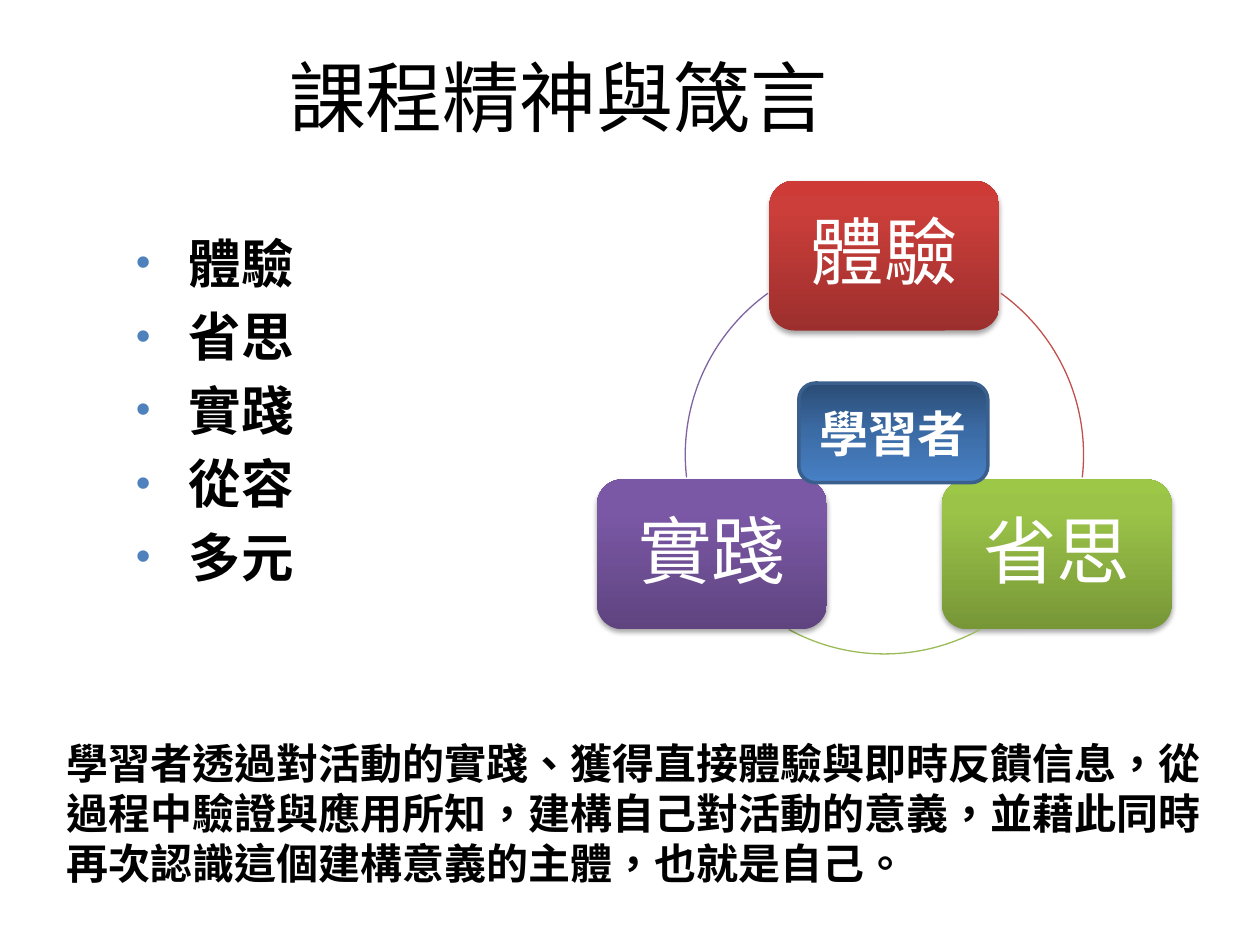
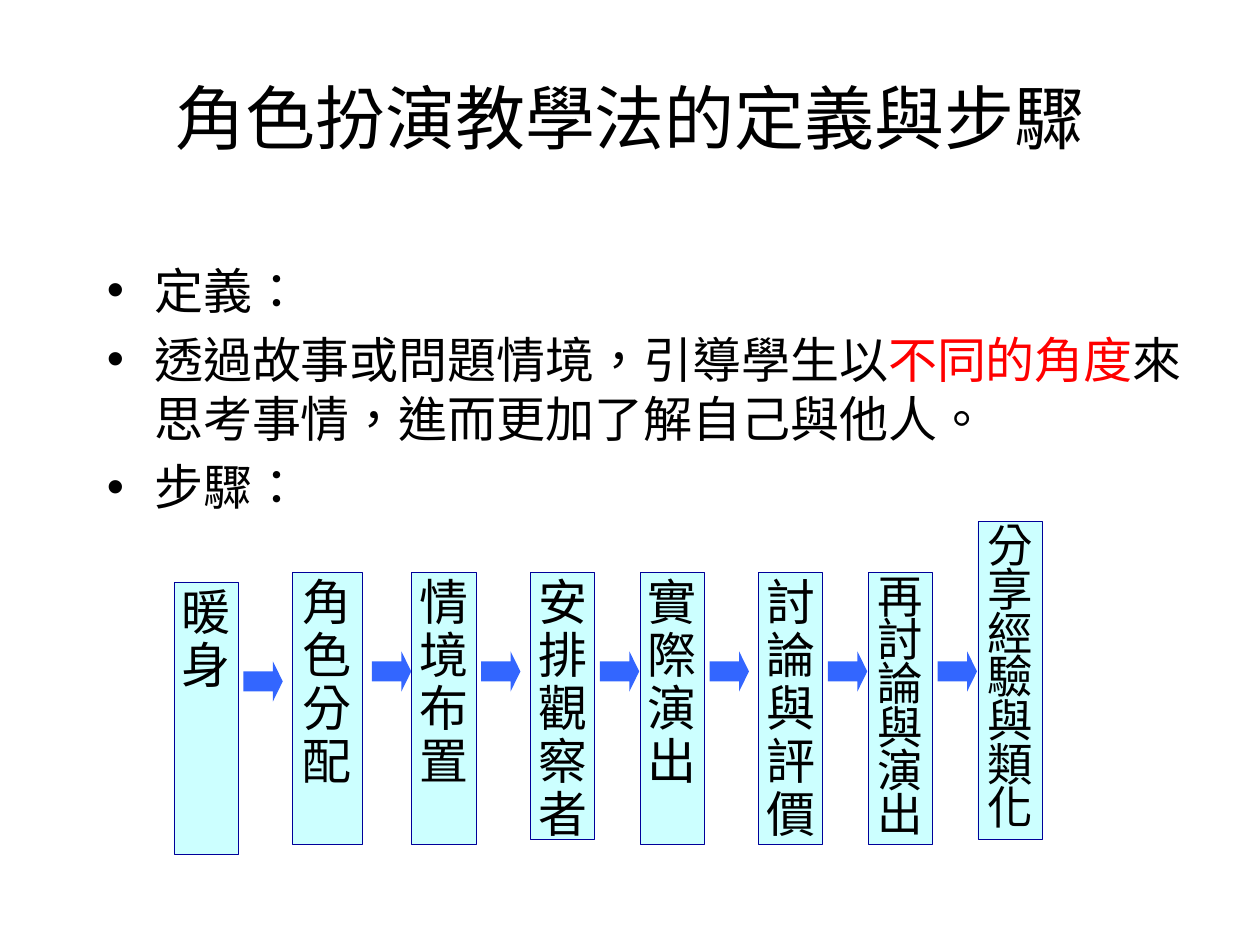
"""Build two teaching slides: the course spirit and the role-play steps."""
import math
from dataclasses import dataclass
from typing import Optional

import lxml.etree
import pptx
import pptx.dml.color
import pptx.enum.dml
import pptx.enum.lang
import pptx.enum.shapes
import pptx.enum.text
import pptx.oxml.ns
import pptx.util

Pt = pptx.util.Pt
qn = pptx.oxml.ns.qn
SHAPES = pptx.enum.shapes.MSO_SHAPE
ALIGN = pptx.enum.text.PP_ALIGN
ANCHOR = pptx.enum.text.MSO_ANCHOR

LATIN, CJK, STEP_FONT = "Calibri", "Noto Sans CJK SC", "Arial"
COLORS = {
    "ink": "000000", "white": "FFFFFF", "emphasis": "FF0000",
    "bullet": "4F81BD", "learner_edge": "3A5F8C",
    "experience": "C0504D", "reflection": "9BBB59", "practice": "8064A2",
    "step": "CCFFFF", "step_edge": "000099", "arrow": "3366FF",
}
GRADIENTS = {
    "experience": ((0, "9C2F2D"), (80, "CB3E3A"), (100, "CE3B37")),
    "reflection": ((0, "779737"), (80, "9BC348"), (100, "9DC746")),
    "practice": ((0, "5F4480"), (80, "7B58A6"), (100, "7C57A8")),
    "learner": ((0, "2A4C75"), (50, "3C6CA6"), (100, "4780C5")),
}


@dataclass(frozen=True)
class Box:
    left: float
    top: float
    width: float
    height: float

    def lengths(self) -> tuple:
        return Pt(self.left), Pt(self.top), Pt(self.width), Pt(self.height)


@dataclass(frozen=True)
class Style:
    size: float
    font: str = LATIN
    color: str = "ink"
    bold: bool = False


@dataclass(frozen=True)
class Bullet:
    indent: float
    color: Optional[str] = None
    percent: int = 100


@dataclass(frozen=True)
class CycleNode:
    label: str
    theme: str
    angle: float
    arc_start: float
    arc_end: float


@dataclass(frozen=True)
class Step:
    label: str
    left: float
    top: float = 326.9
    width: float = 36.7
    height: float = 155.5
    size: float = 28
    spacing: float = 0.9
    arrow_gap: float = 3


CYCLE_X, CYCLE_Y, CYCLE_RADIUS = 505.4, 259.9, 113.8
NODE_WIDTH, NODE_HEIGHT = 131.3, 85.6
CYCLE = (
    CycleNode("體驗", "experience", 270, 305.8, 6.5),
    CycleNode("省思", "reflection", 30, 61.3, 118.7),
    CycleNode("實踐", "practice", 150, 173.5, 234.2),
)
VALUES = ("體驗", "省思", "實踐", "從容", "多元")
SUMMARY = ("學習者透過對活動的實踐、獲得直接體驗與即時反饋信息，從過程中驗證與應用所知，"
           "建構自己對活動的意義，並藉此同時再次認識這個建構意義的主體，也就是自己。")

BODY = Style(28)
DEFINITION = (
    (("定義：", BODY),),
    (("透過故事或問題情境，引導學生以", BODY),
     ("不同的角度", Style(28, CJK, "emphasis")),
     ("來思考事情，進而更加了解自己與他人。", BODY)),
    (("步驟：", BODY),),
)
USUAL_TOP, ARROW_TOP = 326.9, 372.2
STEPS = (
    Step("暖身", 99.4, top=332.6),
    Step("角色分配", 167, width=39.9, arrow_gap=5.6),
    Step("情境布置", 235.2),
    Step("安排觀察者", 303.1, height=152.6),
    Step("實際演出", 365.8),
    Step("討論與評價", 433.4),
    Step("再討論與演出", 496.1, size=26, spacing=0.8),
    Step("分享經驗與類化", 558.7, top=298.1, height=181.4, size=26, spacing=0.8),
)


def rgb(name: str) -> pptx.dml.color.RGBColor:
    return pptx.dml.color.RGBColor.from_string(COLORS[name])


def add_run(paragraph, text: str, style: Style) -> None:
    run = paragraph.add_run()
    run.text = text
    run.font.size = Pt(style.size)
    run.font.name = style.font
    run.font.bold = style.bold
    run.font.color.rgb = rgb(style.color)
    run.font.language_id = pptx.enum.lang.MSO_LANGUAGE_ID.TRADITIONAL_CHINESE
    if style.font == CJK:
        lxml.etree.SubElement(run.font._element, qn("a:ea"), typeface=CJK)


def add_bullet(paragraph, bullet: Bullet) -> None:
    props = paragraph._p.get_or_add_pPr()
    props.set("marL", str(Pt(bullet.indent)))
    props.set("indent", str(-Pt(bullet.indent)))
    if bullet.color:
        tint = lxml.etree.SubElement(props, qn("a:buClr"))
        lxml.etree.SubElement(tint, qn("a:srgbClr"), val=COLORS[bullet.color])
    lxml.etree.SubElement(props, qn("a:buSzPct"), val=str(bullet.percent * 1000))
    lxml.etree.SubElement(props, qn("a:buFont"), typeface="Arial")
    lxml.etree.SubElement(props, qn("a:buChar"), char="•")


def add_text(slide, box: Box, paragraphs, before: float = 0,
             bullet: Optional[Bullet] = None, align=ALIGN.LEFT, anchor=ANCHOR.TOP) -> None:
    frame = slide.shapes.add_textbox(*box.lengths()).text_frame
    frame.word_wrap = True
    frame.vertical_anchor = anchor
    for index, runs in enumerate(paragraphs):
        paragraph = frame.add_paragraph() if index else frame.paragraphs[0]
        paragraph.alignment = align
        paragraph.space_before = Pt(before)
        if bullet:
            add_bullet(paragraph, bullet)
        for text, style in runs:
            add_run(paragraph, text, style)


def add_title(slide, text: str, box: Box, size: float) -> None:
    add_text(slide, box, [[(text, Style(size))]], align=ALIGN.CENTER, anchor=ANCHOR.MIDDLE)


def add_figure(slide, kind, box: Box, fill: Optional[str] = None,
               edge: Optional[str] = None, edge_width: float = 0):
    figure = slide.shapes.add_shape(kind, *box.lengths())
    figure.shadow.inherit = False
    if fill:
        figure.fill.solid()
        figure.fill.fore_color.rgb = rgb(fill)
    else:
        figure.fill.background()
    if edge:
        figure.line.color.rgb = rgb(edge)
        figure.line.width = Pt(edge_width)
    else:
        figure.line.fill.background()
    return figure


def label_figure(figure, text: str, style: Style, anchor=ANCHOR.MIDDLE,
                 spacing: float = 1, margins: tuple = (7.2, 3.6)) -> None:
    frame = figure.text_frame
    frame.word_wrap = True
    frame.vertical_anchor = anchor
    frame.margin_left = frame.margin_right = Pt(margins[0])
    frame.margin_top = frame.margin_bottom = Pt(margins[1])
    paragraph = frame.paragraphs[0]
    paragraph.alignment = ALIGN.CENTER
    paragraph.line_spacing = spacing
    add_run(paragraph, text, style)


def apply_gradient(figure, theme: str, angle: float) -> None:
    figure.fill.gradient()
    figure.fill.gradient_angle = angle
    stops = figure._element.spPr.find(qn("a:gradFill")).find(qn("a:gsLst"))
    for stop in list(stops):
        stops.remove(stop)
    for position, color in GRADIENTS[theme]:
        stop = lxml.etree.SubElement(stops, qn("a:gs"), pos=str(position * 1000))
        lxml.etree.SubElement(stop, qn("a:srgbClr"), val=color)


def apply_shadow(figure) -> None:
    effects = figure._element.spPr.find(qn("a:effectLst"))
    shadow = lxml.etree.SubElement(
        effects, qn("a:outerShdw"), blurRad=str(Pt(3.1)), dist=str(Pt(1.8)),
        dir="5400000", rotWithShape="0")
    color = lxml.etree.SubElement(shadow, qn("a:srgbClr"), val=COLORS["ink"])
    lxml.etree.SubElement(color, qn("a:alpha"), val="35000")


def add_cycle_node(slide, node: CycleNode) -> None:
    turn = math.radians(node.angle)
    center_x = CYCLE_X + CYCLE_RADIUS * math.cos(turn)
    center_y = CYCLE_Y + CYCLE_RADIUS * math.sin(turn)
    card = add_figure(slide, SHAPES.ROUNDED_RECTANGLE, Box(
        center_x - NODE_WIDTH / 2, center_y - NODE_HEIGHT / 2, NODE_WIDTH, NODE_HEIGHT))
    apply_gradient(card, node.theme, 90)
    apply_shadow(card)
    label_figure(card, node.label, Style(42, color="white"), spacing=0.9, margins=(12.2, 12.2))
    arc = add_figure(slide, SHAPES.ARC, Box(
        CYCLE_X - CYCLE_RADIUS, CYCLE_Y - CYCLE_RADIUS, 2 * CYCLE_RADIUS, 2 * CYCLE_RADIUS),
        edge=node.theme, edge_width=0.75)
    arc.adjustments[0] = node.arc_start * 0.6
    arc.adjustments[1] = node.arc_end * 0.6


def add_step(slide, step: Step, has_next: bool) -> None:
    card = add_figure(slide, SHAPES.RECTANGLE, Box(step.left, step.top, step.width, step.height),
                      "step", "step_edge", 0.25)
    label_figure(card, step.label, Style(step.size, STEP_FONT), ANCHOR.TOP,
                 step.spacing, (1.4, 3.6))
    if has_next:
        arrow = add_figure(slide, SHAPES.RIGHT_ARROW, Box(
            step.left + step.width + step.arrow_gap,
            ARROW_TOP + step.top - USUAL_TOP, 22.5, 23), "arrow")
        arrow.adjustments[0] = 0.5
        arrow.adjustments[1] = 0.25


def build_spirit(slide) -> None:
    add_title(slide, "課程精神與箴言", Box(25.2, 9.4, 588.2, 90), 44)
    for node in CYCLE:
        add_cycle_node(slide, node)
    learner = add_figure(slide, SHAPES.ROUNDED_RECTANGLE, Box(456.5, 218.9, 108, 56.9),
                         edge="learner_edge", edge_width=2)
    apply_gradient(learner, "learner", 270)
    label_figure(learner, "學習者", Style(28, color="white", bold=True))
    add_text(slide, Box(70.6, 128.2, 149.8, 235.4),
             [[(value, Style(30, CJK, bold=True))] for value in VALUES],
             before=6, bullet=Bullet(30.2, "bullet", 80))
    add_text(slide, Box(31, 417.6, 668.9, 94.3),
             [[(SUMMARY, Style(24, CJK, bold=True))]], before=12)


def build_role_play(slide) -> None:
    add_title(slide, "角色扮演教學法的定義與步驟", Box(36, 21.6, 648, 90), 40)
    add_text(slide, Box(54, 145.4, 646.6, 360), DEFINITION, before=5.6, bullet=Bullet(27))
    for index, step in enumerate(STEPS):
        add_step(slide, step, index < len(STEPS) - 1)


def main() -> None:
    deck = pptx.Presentation()
    deck.slide_width, deck.slide_height = Pt(720), Pt(540)
    for build in (build_spirit, build_role_play):
        build(deck.slides.add_slide(deck.slide_layouts[6]))
    deck.save("out.pptx")


if __name__ == "__main__":
    main()
